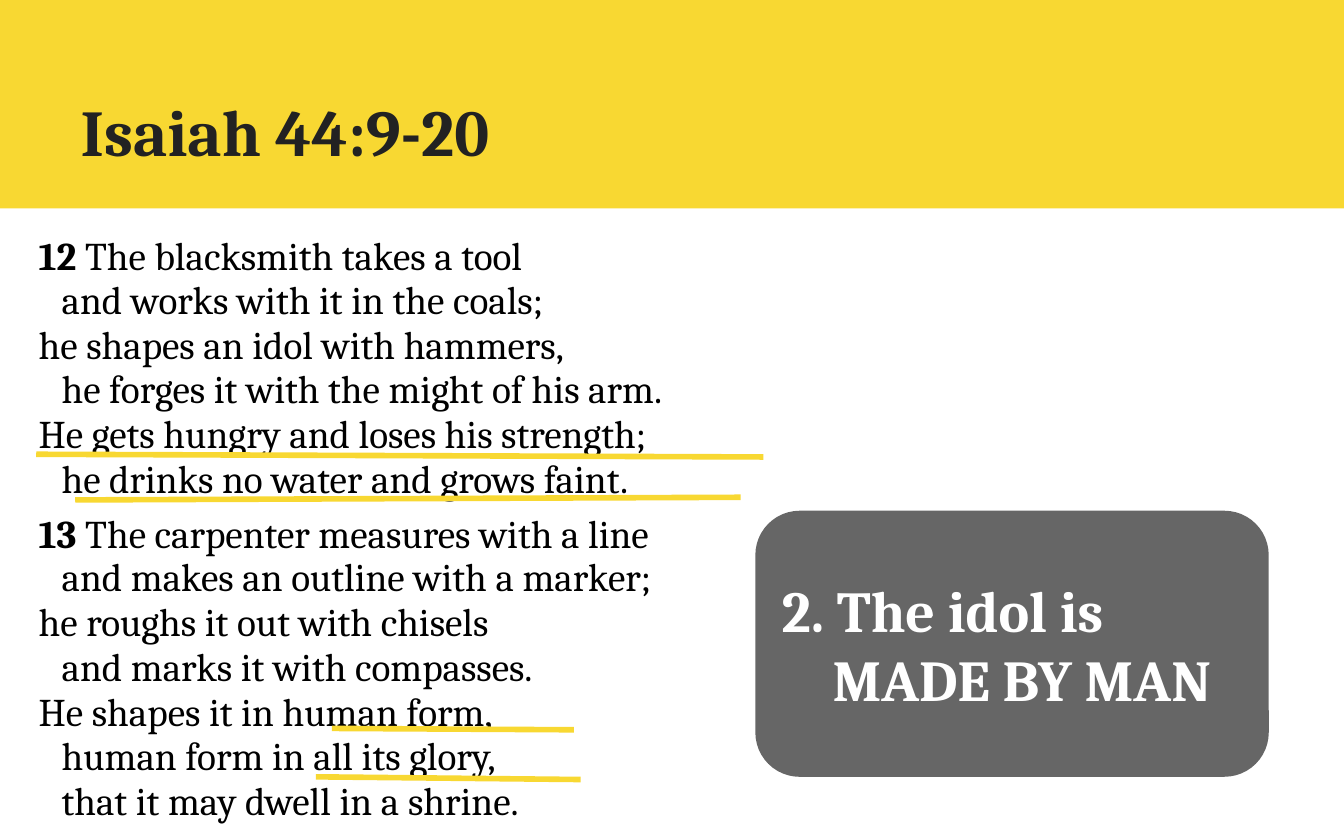
"""Build the Isaiah 44 slide on a grid of 200 columns by 125 rows."""
from typing import NamedTuple

import lxml.etree
import pptx
import pptx.dml.color
import pptx.enum.shapes
import pptx.enum.text
import pptx.oxml.ns
import pptx.util

HUES = {"gold": "F8D832", "gray": "666666", "dark": "222222", "black": "000000", "white": "FFFFFF"}
FACE = "Cambria"
CELL = pptx.util.Inches(0.05)
COLS, ROWS = 200, 125
PAD = 2


class Box(NamedTuple):
    left: float
    top: float
    width: float
    height: float


class Rule(NamedTuple):
    left: float
    start: float
    right: float
    end: float


class Verse(NamedTuple):
    text: str
    label: str = ""
    inset: bool = False


VERSES = [
    Verse("The blacksmith takes a tool", label="12 "),
    Verse("and works with it in the coals;", inset=True),
    Verse("he shapes an idol with hammers,"),
    Verse("he forges it with the might of his arm.", inset=True),
    Verse("He gets hungry and loses his strength;"),
    Verse("he drinks no water and grows faint.", inset=True),
    Verse("The carpenter measures with a line", label="13 "),
    Verse("and makes an outline with a marker;", inset=True),
    Verse("he roughs it out with chisels"),
    Verse("and marks it with compasses.", inset=True),
    Verse("He shapes it in human form,"),
    Verse("human form in all its glory,", inset=True),
    Verse("that it may dwell in a shrine.", inset=True),
]
RULES = [
    Rule(5.4, 67.6, 113.6, 68),
    Rule(11.2, 74.4, 110.2, 74),
    Rule(49.4, 108.4, 85.4, 108.6),
    Rule(47, 115.6, 86.4, 116),
]


def span(cells: float) -> int:
    """Turn grid cells into a length."""
    return round(cells * CELL)


def tint(name: str) -> pptx.dml.color.RGBColor:
    """Look up a named colour."""
    return pptx.dml.color.RGBColor.from_string(HUES[name])


def add_tag(host, tag: str, **attrs: str):
    """Append a drawing element to an XML host."""
    return lxml.etree.SubElement(host, pptx.oxml.ns.qn(tag), attrs)


def style(para, size: float, hue: str, bold: bool = False) -> None:
    """Set the font and left alignment of a paragraph."""
    para.alignment = pptx.enum.text.PP_ALIGN.LEFT
    font = para.font
    font.name, font.size, font.bold = FACE, pptx.util.Pt(size), bold
    font.color.rgb = tint(hue)


def indent(para, left: float, first: float = 0) -> None:
    """Indent a paragraph by grid cells."""
    props = para._p.get_or_add_pPr()
    props.set("marL", str(span(left)))
    props.set("indent", str(span(first)))


def set_frame(frame, anchor, top: float = PAD) -> None:
    """Set wrapping, anchor and margins of a text frame."""
    frame.word_wrap = True
    frame.auto_size = pptx.enum.text.MSO_AUTO_SIZE.NONE
    frame.vertical_anchor = anchor
    frame.margin_left = frame.margin_right = frame.margin_bottom = span(PAD)
    frame.margin_top = span(top)


def add_title(slide, box: Box, text: str) -> None:
    """Place and format the title band."""
    title = slide.shapes.title
    title.left, title.top, title.width, title.height = map(span, box)
    title.fill.solid()
    title.fill.fore_color.rgb = tint("gold")
    set_frame(title.text_frame, pptx.enum.text.MSO_ANCHOR.TOP, top=13.6)
    title.text_frame.text = text
    para = title.text_frame.paragraphs[0]
    indent(para, 10)
    style(para, 35, "dark", bold=True)


def add_run(para, text: str, bold: bool = False) -> None:
    """Add a run with a white highlight."""
    run = para.add_run()
    run.text = text
    run.font.bold = bold
    mark = add_tag(run._r.get_or_add_rPr(), "a:highlight")
    add_tag(mark, "a:srgbClr", val=HUES["white"])


def add_verses(slide, box: Box, verses: list[Verse]) -> None:
    """Write the verses, one paragraph a line."""
    frame = slide.shapes.add_textbox(*map(span, box)).text_frame
    set_frame(frame, pptx.enum.text.MSO_ANCHOR.TOP)
    for num, verse in enumerate(verses):
        para = frame.add_paragraph() if num else frame.paragraphs[0]
        para.line_spacing = 1.15 if verse.label else 0.95
        indent(para, 3.4 if verse.inset else 0)
        style(para, 21, "black")
        if verse.label:
            add_run(para, verse.label, bold=True)
        add_run(para, verse.text)


def add_rule(slide, rule: Rule) -> None:
    """Draw one gold underline."""
    kind = pptx.enum.shapes.MSO_CONNECTOR.STRAIGHT
    line = slide.shapes.add_connector(kind, *map(span, rule))
    line.line.color.rgb = tint("gold")
    line.line.width = pptx.util.Pt(3)
    add_tag(line._element.spPr, "a:effectLst")


def add_point(slide, box: Box, text: str) -> None:
    """Draw the rounded box with the main point."""
    kind = pptx.enum.shapes.MSO_SHAPE.ROUNDED_RECTANGLE
    shape = slide.shapes.add_shape(kind, *map(span, box))
    shape.shadow.inherit = False
    shape.fill.solid()
    shape.fill.fore_color.rgb = tint("gray")
    shape.line.fill.background()
    set_frame(shape.text_frame, pptx.enum.text.MSO_ANCHOR.MIDDLE)
    shape.text_frame.text = text
    para = shape.text_frame.paragraphs[0]
    indent(para, 7.6, -7.6)
    style(para, 31, "white", bold=True)


def main() -> None:
    """Build and save the slide."""
    deck = pptx.Presentation()
    deck.slide_width, deck.slide_height = span(COLS), span(ROWS)
    slide = deck.slides.add_slide(deck.slide_layouts[5])
    add_title(slide, Box(0, 0, COLS, 31), "Isaiah 44:9-20")
    add_verses(slide, Box(3.8, 31.4, 184.8, 93.6), VERSES)
    for rule in RULES:
        add_rule(slide, rule)
    add_point(slide, Box(112.4, 76, 76.4, 39.6), "2. The idol is MADE BY MAN")
    deck.save("out.pptx")


if __name__ == "__main__":
    main()
